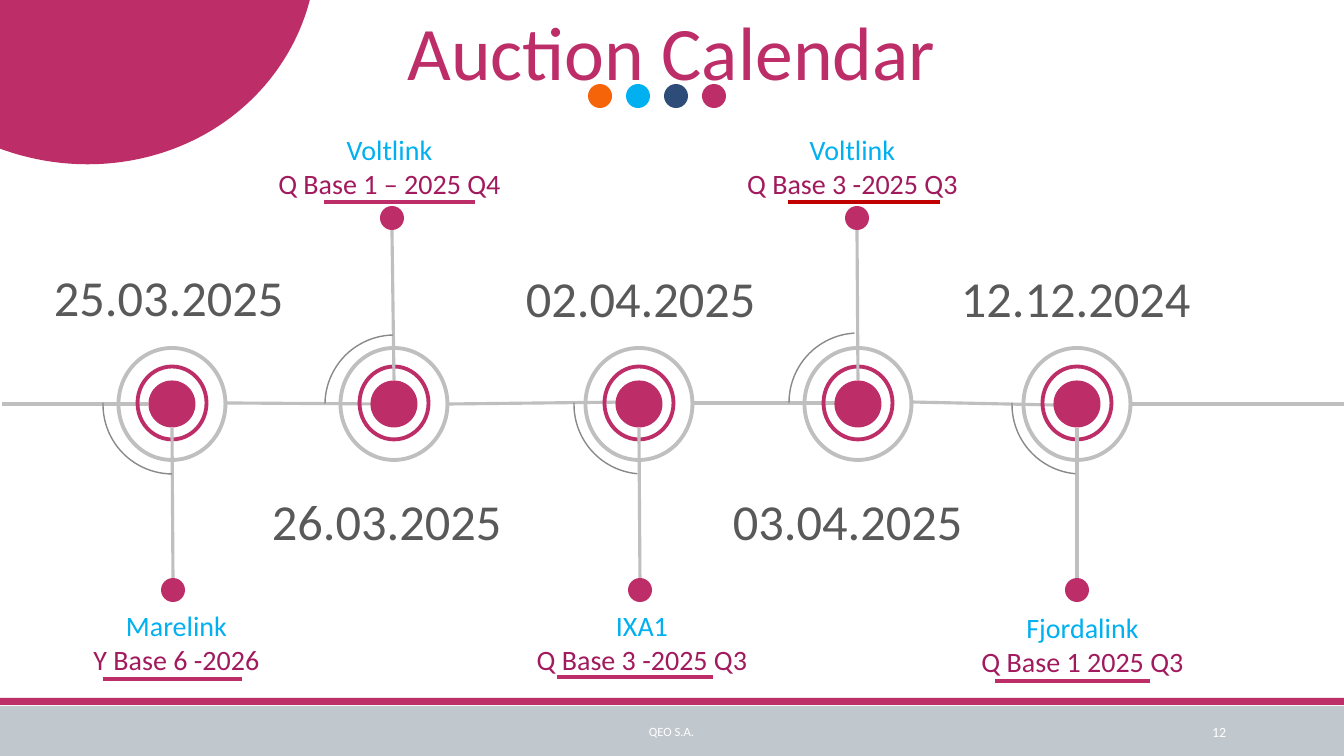
from dataclasses import dataclass

from lxml import etree
from pptx import Presentation, util as u
from pptx.dml.color import RGBColor
from pptx.enum import shapes, text
from pptx.oxml.ns import qn

PX = 914400 / 100.8
PINK, GREY, BLUE, PLUM = "BD2D67", "BFBFBF", "00B0F0", "A11A5D"
WHITE, DARK, ARC = "FFFFFF", "595959", "898989"
FONT = "Calibri"
OVAL = shapes.MSO_SHAPE.OVAL
RECT = shapes.MSO_SHAPE.RECTANGLE
LEFT, MID, RIGHT = text.PP_ALIGN.LEFT, text.PP_ALIGN.CENTER, text.PP_ALIGN.RIGHT
TOP, CENTER = text.MSO_ANCHOR.TOP, text.MSO_ANCHOR.MIDDLE

Box = tuple[int, int, int, int]


@dataclass
class Stop:
    """One auction on the timeline."""
    x: int                 # centre of the rings
    tip: int               # centre of the small dot
    up: bool               # stem points up
    date: str
    spot: tuple[int, int]  # place of the date
    name: str
    item: str
    label: Box
    rule: tuple[int, int, int]  # underline: start, end, height
    arc: tuple[int, int, float, float]  # left, top, start, end
    tint: str = PINK


STOPS = [
    Stop(172, 173, False, "25.03.2025", (44, 261), "Marelink", "Y Base 6 -2026",
         (24, 604, 305, 78), (103, 242, 679), (103, 335, 54.3, 108.87)),
    Stop(394, 392, True, "26.03.2025", (262, 485), "Voltlink", "Q Base 1 – 2025 Q4",
         (251, 128, 277, 78), (324, 475, 202), (325, 335, 108.4, 161.16)),
    Stop(639, 640, False, "02.04.2025", (516, 262), "IXA1", "Q Base 3 -2025 Q3",
         (507, 604, 270, 78), (557, 713, 677), (574, 335, 57.03, 108.86)),
    Stop(858, 857, True, "03.04.2025", (723, 485), "Voltlink", "Q Base 3 -2025 Q3",
         (698, 128, 309, 78), (788, 940, 202), (789, 333, 107.69, 159.93), "C00000"),
    Stop(1077, 1077, False, "12.12.2024", (951, 262), "Fjordalink", "Q Base 1 2025 Q3",
         (952, 606, 261, 78), (995, 1150, 681), (1012, 335, 57.03, 108.86)),
]

# Pieces of the base line: x1, y1, x2, y2
BASE = [(2, 404, 148, 404), (226, 403, 390, 404), (448, 404, 632, 402),
        (694, 403, 847, 403), (910, 402, 1054, 405), (1131, 404, 1344, 404)]

DOTS = ["F6640A", BLUE, "2E4C78", PINK]


def px(n: float) -> u.Emu:
    return u.Emu(round(n * PX))


def rgb(code: str) -> RGBColor:
    return RGBColor.from_string(code)


deck = Presentation()
deck.slide_width, deck.slide_height = px(1344), px(756)
slide = deck.slides.add_slide(deck.slide_layouts[6])


def shape(kind, box: Box, fill: str = "", line: str = "", width: float = 2.75):
    new = slide.shapes.add_shape(kind, *map(px, box))
    new.shadow.inherit = False
    if fill:
        new.fill.solid()
        new.fill.fore_color.rgb = rgb(fill)
    else:
        new.fill.background()
    if line:
        new.line.color.rgb = rgb(line)
        new.line.width = u.Pt(width)
    else:
        new.line.fill.background()
    return new


def oval(x: float, y: float, w: int, h: int, **style) -> None:
    """Draw an ellipse around a centre."""
    shape(OVAL, (x - w / 2, y - h / 2, w, h), **style)


def line(x1: int, y1: int, x2: int, y2: int, color: str = GREY) -> None:
    new = slide.shapes.add_connector(
        shapes.MSO_CONNECTOR.STRAIGHT, px(x1), px(y1), px(x2), px(y2))
    new.line.color.rgb = rgb(color)
    new.line.width = u.Pt(2.25)
    etree.SubElement(new._element.spPr, qn("a:effectLst"))


def write(box: Box, *parts: tuple[str, str], size: int = 20,
          align=MID, anchor=TOP) -> None:
    """Write (words, colour) parts, one a line."""
    frame = slide.shapes.add_textbox(*map(px, box)).text_frame
    frame.word_wrap = True
    frame.vertical_anchor = anchor
    para = frame.paragraphs[0]
    para.alignment = align
    for i, (words, color) in enumerate(parts):
        if i:
            para.add_line_break()
        run = para.add_run()
        run.text = words
        run.font.name = FONT
        run.font.size = u.Pt(size)
        run.font.color.rgb = rgb(color)


def draw(stop: Stop) -> None:
    x, mid = stop.x, 404
    # Rings
    oval(x, mid, 47, 47, fill=PINK)
    oval(x, mid - 1, 69, 73, line=PINK)
    oval(x, mid, 107, 112, line=GREY)
    # Stem and dot
    side = -1 if stop.up else 1
    end = mid + side * 186
    line(x, mid + side * 24, stop.tip, end - side * 12)
    oval(stop.tip, end, 24, 24, fill=PINK)
    # Arc
    left, top, start, stop_at = stop.arc
    arc = shape(shapes.MSO_SHAPE.ARC, (left, top, 139, 139), line=ARC, width=1)
    arc.adjustments[0] = start
    arc.adjustments[1] = stop_at
    # Date and label
    write((*stop.spot, 261, 72), (stop.date, DARK), size=36, align=LEFT)
    write(stop.label, (stop.name, BLUE), (stop.item, PLUM))
    x1, x2, y = stop.rule
    line(x1, y, x2, y, stop.tint)


# Footer
shape(RECT, (0, 706, 1344, 50), fill="C0C7CD")
shape(RECT, (0, 698, 1344, 7), fill=PINK)
write((406, 712, 531, 40), ("QEO S.A.", WHITE), size=9, anchor=CENTER)
write((1092, 712, 144, 40), ("12", WHITE), size=10, align=RIGHT, anchor=CENTER)

# Timeline
for piece in BASE:
    line(*piece)
for stop in STOPS:
    draw(stop)

# Corner and title
chord = shape(shapes.MSO_SHAPE.CHORD, (-150, -307, 454, 484), fill=PINK)
chord.rotation = 292.2
write((387, 0, 569, 102), ("Auction Calendar", PINK), size=54)
for i, color in enumerate(DOTS):
    oval(600 + 38 * i, 96, 24, 24, fill=color)

deck.save("out.pptx")
